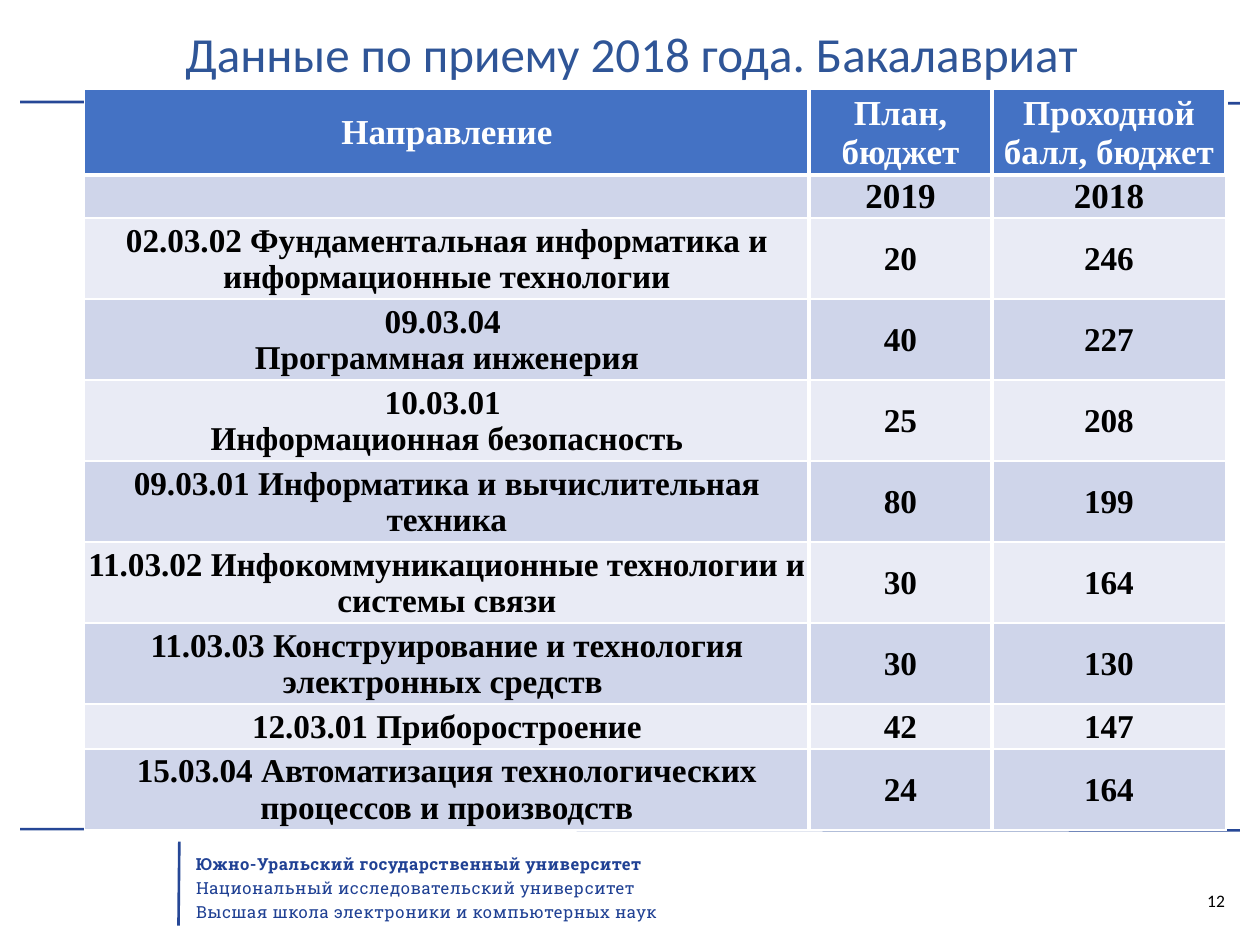
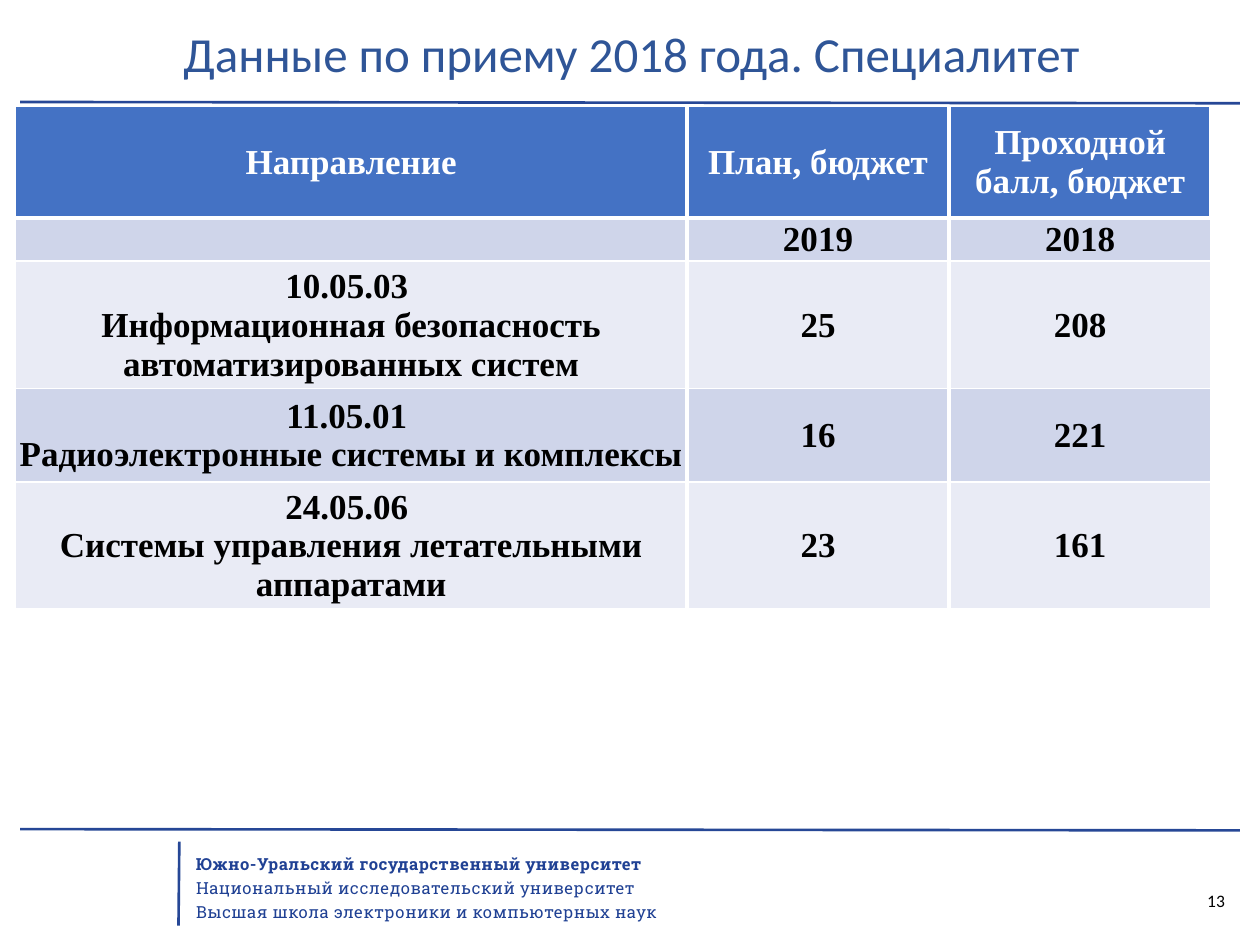
from lxml import etree
from pptx import Presentation
from pptx.dml.color import RGBColor
from pptx.enum.shapes import MSO_CONNECTOR
from pptx.enum.text import MSO_ANCHOR, MSO_AUTO_SIZE, PP_ALIGN
from pptx.oxml.ns import qn
from pptx.util import Pt

STRAIGHT = MSO_CONNECTOR.STRAIGHT
MIDDLE = MSO_ANCHOR.MIDDLE
CENTER, RIGHT = PP_ALIGN.CENTER, PP_ALIGN.RIGHT
TITLE_ONLY = 5

RULE_BLUE = RGBColor(0x26, 0x47, 0x96)
FOOTER_BLUE = RGBColor(0x20, 0x41, 0x94)
TITLE_BLUE = RGBColor(0x2F, 0x55, 0x97)
HEADER_BLUE = RGBColor(0x44, 0x72, 0xC4)
BAND_DARK = RGBColor(0xCF, 0xD5, 0xEA)
BAND_LIGHT = RGBColor(0xE9, 0xEB, 0xF5)
WHITE = RGBColor(0xFF, 0xFF, 0xFF)
BLACK = RGBColor(0, 0, 0)

TITLE_FONT = dict(name="Calibri", size=Pt(28), color=TITLE_BLUE)
NUMBER_FONT = dict(name="Calibri", size=Pt(10), color=BLACK)
FOOTER_FONT = dict(name="Roboto Slab", size=Pt(9.5), color=FOOTER_BLUE)
TABLE_FONT = dict(name="Times New Roman", bold=True)
CELL_LAYOUT = dict(margin_left=Pt(0.7), margin_right=Pt(0.7), margin_top=Pt(0.7),
                   margin_bottom=0, vertical_anchor=MIDDLE)

RULES = [(11.5, 58.3, 708.5, 59), (11.5, 473.8, 708.5, 474.5), (102.5, 481, 102, 529)]
FOOTER_LINES = [
    "Южно-Уральский государственный университет",
    "Национальный исследовательский университет",
    "Высшая школа электроники и компьютерных наук",
]
TABLE_HEAD = [
    ("Направление", "План, бюджет", "Проходной балл, бюджет"),
    ("", "2019", "2018"),
]
BACHELOR = [
    ("02.03.02 Фундаментальная информатика и информационные технологии", "20", "246"),
    ("09.03.04 \nПрограммная инженерия", "40", "227"),
    ("10.03.01 \nИнформационная безопасность", "25", "208"),
    ("09.03.01 Информатика и вычислительная техника", "80", "199"),
    ("11.03.02 Инфокоммуникационные технологии и системы связи", "30", "164"),
    ("11.03.03 Конструирование и технология электронных средств ", "30", "130"),
    ("12.03.01 Приборостроение", "42", "147"),
    ("15.03.04 Автоматизация технологических процессов и производств", "24", "164"),
]
SPECIALIST = [
    ("10.05.03 \nИнформационная безопасность автоматизированных систем", "25", "208"),
    ("11.05.01 \nРадиоэлектронные системы и комплексы", "16", "221"),
    ("24.05.06 \nСистемы управления летательными аппаратами", "23", "161"),
]


def apply(obj, values):
    for name, value in values.items():
        setattr(obj, name, value)


def set_font(r, color, **values):
    apply(r.font, values)
    r.font.color.rgb = color


def add_rule(s, x1, y1, x2, y2):
    line = s.shapes.add_connector(STRAIGHT, Pt(x1), Pt(y1), Pt(x2), Pt(y2))
    line.line.color.rgb = RULE_BLUE
    line.line.width = Pt(1.5)
    etree.SubElement(line._element.spPr, qn("a:effectLst"))


def add_text_box(s, x, y, w, h):
    tf = s.shapes.add_textbox(Pt(x), Pt(y), Pt(w), Pt(h)).text_frame
    tf.word_wrap = True
    return tf


def add_footer(s, number):
    tf = add_text_box(s, 105, 482.4, 420.5, 49)
    tf.text = "\n".join(FOOTER_LINES)
    for i, p in enumerate(tf.paragraphs):
        p.line_spacing = 1.2
        r = p.runs[0]
        set_font(r, bold=i == 0, **FOOTER_FONT)
        r.font._element.set("spc", "30")

    tf = add_text_box(s, 545, 500.4, 162, 28.8)
    tf.vertical_anchor = MIDDLE
    tf.text = str(number)
    p = tf.paragraphs[0]
    p.alignment = RIGHT
    set_font(p.runs[0], **NUMBER_FONT)


def set_title(s, text):
    sp = s.shapes.title
    apply(sp, dict(left=Pt(13), top=Pt(10.8), width=Pt(695.5), height=Pt(43.2)))
    tf = sp.text_frame
    tf.text = text
    apply(tf, dict(vertical_anchor=MIDDLE, auto_size=MSO_AUTO_SIZE.NONE, word_wrap=True))
    p = tf.paragraphs[0]
    apply(p, dict(alignment=CENTER, line_spacing=0.9))
    set_font(p.runs[0], **TITLE_FONT)


def add_slide(prs, title, number):
    s = prs.slides.add_slide(prs.slide_layouts[TITLE_ONLY])
    for rule in RULES:
        add_rule(s, *rule)
    set_title(s, title)
    add_footer(s, number)
    return s


def set_borders(cell, widths):
    """Draw white borders; widths maps L, R, T, B (in this order) to points."""
    tcPr = cell._tc.get_or_add_tcPr()
    for side, width in widths.items():
        ln = etree.SubElement(tcPr, qn(f"a:ln{side}"), w=str(Pt(width)))
        fill = etree.SubElement(ln, qn("a:solidFill"))
        etree.SubElement(fill, qn("a:srgbClr"), val=str(WHITE))


def fill_cell(cell, text, fill, color, size):
    apply(cell, CELL_LAYOUT)
    cell.fill.solid()
    cell.fill.fore_color.rgb = fill
    cell.text = text
    for p in cell.text_frame.paragraphs:
        p.alignment = CENTER
        for r in p.runs:
            set_font(r, color, size=Pt(size), **TABLE_FONT)
        if not p.runs:
            etree.SubElement(p._p, qn("a:endParaRPr"), sz="1000")


def add_admission_table(s, x, y, col_widths, row_heights, programmes, size):
    rows = TABLE_HEAD + programmes
    table = s.shapes.add_table(len(rows), len(col_widths), Pt(x), Pt(y),
                               Pt(sum(col_widths)), Pt(sum(row_heights))).table
    for column, width in zip(table.columns, col_widths):
        column.width = Pt(width)
    last = len(col_widths) - 1
    for i, (row, height) in enumerate(zip(rows, row_heights)):
        table.rows[i].height = Pt(height)
        header = i == 0
        band = HEADER_BLUE if header else BAND_DARK if i % 2 else BAND_LIGHT
        for j, text in enumerate(row):
            cell = table.cell(i, j)
            set_borders(cell, dict(L=3 if j else 1, R=3 if header or j < last else 1,
                                   T=3 if i == 1 else 1, B=3 if header else 1))
            fill_cell(cell, text, band, WHITE if header else BLACK,
                      20 if i < len(TABLE_HEAD) else size)


def main():
    prs = Presentation()
    prs.slide_width, prs.slide_height = Pt(720), Pt(540)

    s = add_slide(prs, "Данные по приему 2018 года. Бакалавриат", 12)
    heights = [46, 23] + [46] * 6 + [25.6, 46]
    add_admission_table(s, 48.4, 51.2, [414, 104.4, 133.9], heights, BACHELOR, 19)

    s = add_slide(prs, "Данные по приему 2018 года. Специалитет", 13)
    heights = [64, 24] + [53.4] * 3
    add_admission_table(s, 8.8, 60.5, [383.8, 149.8, 149.8], heights, SPECIALIST, 20)

    prs.save("out.pptx")


if __name__ == "__main__":
    main()
